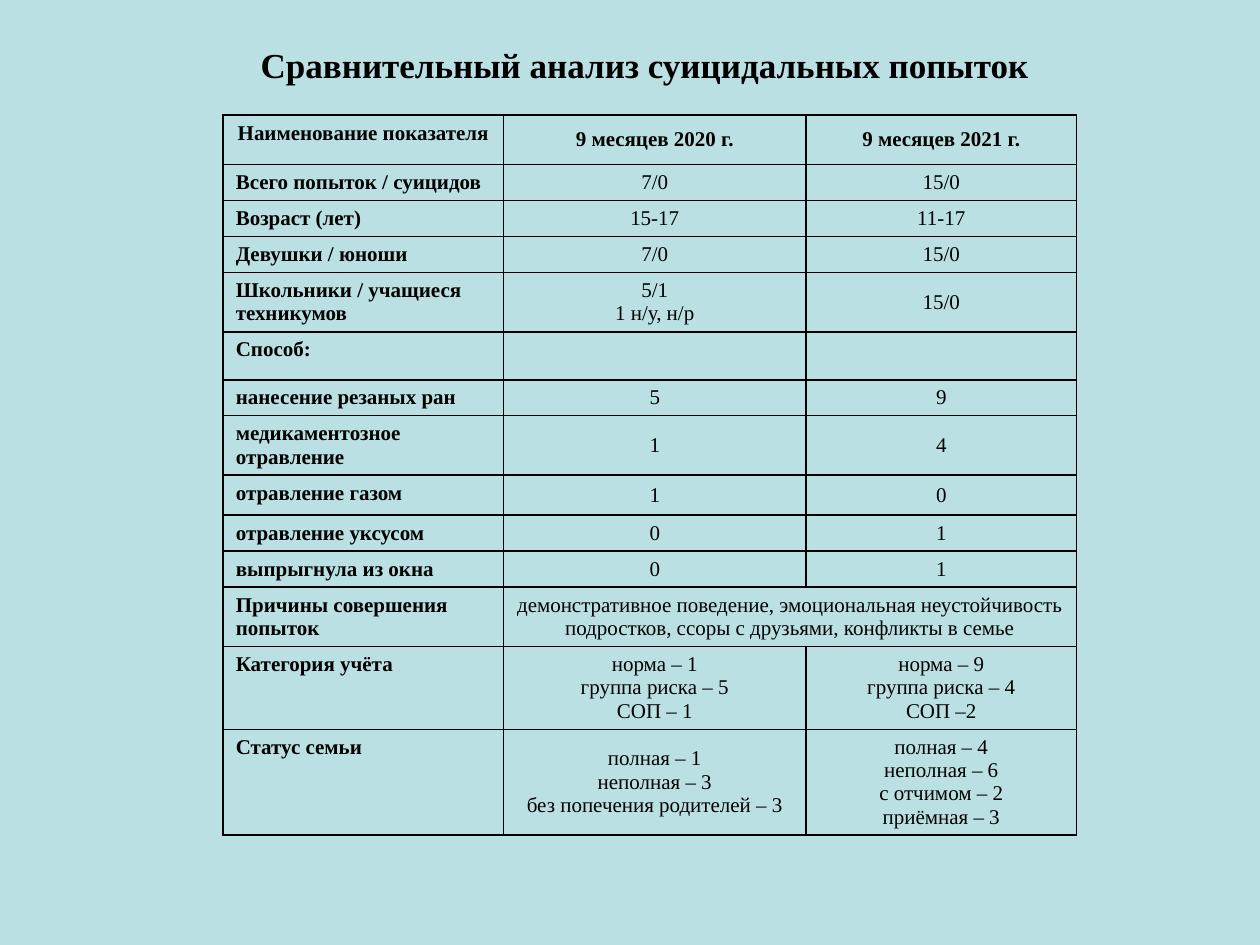
from pptx import Presentation
from pptx.dml.color import RGBColor
from pptx.enum.text import MSO_ANCHOR, PP_ALIGN
from pptx.oxml import parse_xml
from pptx.oxml.ns import nsdecls
from pptx.util import Cm, Pt

COLORS = {"back": "BBE0E3", "ink": "000000"}
WIDTHS = [5.65, 6.1, 5.45]
HEIGHTS = [1, 0.72, 0.72, 0.72, 1.19, 0.81, 0.72,
           1.19, 0.81, 0.72, 0.72, 1.19, 1.67, 2.13]
ROWS = [
    ("Наименование показателя", "9 месяцев 2020 г.", "9 месяцев 2021 г."),
    ("Всего попыток / суицидов", "7/0", "15/0"),
    ("Возраст (лет)", "15-17", "11-17"),
    ("Девушки / юноши", "7/0", "15/0"),
    ("Школьники / учащиеся техникумов", "5/1\n1 н/у, н/р", "15/0"),
    ("Способ:", "", ""),
    ("нанесение резаных ран", "5", "9"),
    ("медикаментозное отравление", "1", "4"),
    ("отравление газом", "1", "0"),
    ("отравление уксусом", "0", "1"),
    ("выпрыгнула из окна", "0", "1"),
    ("Причины совершения попыток",
     "демонстративное поведение, эмоциональная неустойчивость "
     "подростков, ссоры с друзьями, конфликты в семье"),
    ("Категория учёта", "норма – 1\nгруппа риска – 5\nСОП – 1",
     "норма – 9\nгруппа риска – 4\nСОП –2"),
    ("Статус семьи", "полная – 1\nнеполная – 3\nбез попечения родителей – 3",
     "полная – 4\nнеполная – 6\nс отчимом – 2\nприёмная – 3"),
]


class Deck:
    """Holds the style and the current slide."""

    def __init__(self):
        self.font = "Times New Roman"
        self.file = Presentation()
        self.file.slide_width, self.file.slide_height = Cm(25.4), Cm(19.05)
        self.slide = self.file.slides.add_slide(self.file.slide_layouts[5])
        fill = self.slide.background.fill
        fill.solid()
        fill.fore_color.rgb = RGBColor.from_string(COLORS["back"])

    def label(self, frame, text, size, bold, align):
        frame.text = text
        for para in frame.paragraphs:
            para.alignment = align
            para.font.name = self.font
            para.font.size = Pt(size)
            para.font.bold = bold
            para.font.color.rgb = RGBColor.from_string(COLORS["ink"])
            if not text:
                para.add_run().font.size = Pt(size)

    def title(self, text, left, top, width, height):
        shape = self.slide.shapes.title
        shape.left, shape.top = Cm(left), Cm(top)
        shape.width, shape.height = Cm(width), Cm(height)
        shape.text_frame.vertical_anchor = MSO_ANCHOR.MIDDLE
        self.label(shape.text_frame, text, 20, True, PP_ALIGN.CENTER)

    def border(self, cell):
        props = cell._tc.get_or_add_tcPr()
        for place, side in enumerate(("lnL", "lnR", "lnT", "lnB")):
            props.insert(place, parse_xml(
                f'<a:{side} {nsdecls("a")} w="{Pt(1)}"><a:solidFill>'
                f'<a:srgbClr val="{COLORS["ink"]}"/></a:solidFill></a:{side}>'))

    def table(self, rows, left, top, widths, heights):
        table = self.slide.shapes.add_table(
            len(rows), len(widths), Cm(left), Cm(top),
            Cm(sum(widths)), Cm(sum(heights))).table
        table.first_row = table.horz_banding = False
        for col, width in zip(table.columns, widths):
            col.width = Cm(width)
        for r, (texts, height) in enumerate(zip(rows, heights)):
            table.rows[r].height = Cm(height)
            for c in range(len(widths)):
                cell = table.cell(r, c)
                cell.fill.background()
                self.border(cell)
                cell.vertical_anchor = MSO_ANCHOR.MIDDLE if c else MSO_ANCHOR.TOP
                align = PP_ALIGN.LEFT if r and not c else PP_ALIGN.CENTER
                if c < len(texts):
                    self.label(cell.text_frame, texts[c], 12, not (r and c), align)
            if len(texts) < len(widths):
                table.cell(r, len(texts) - 1).merge(table.cell(r, len(widths) - 1))


def main():
    deck = Deck()
    deck.title("Сравнительный анализ суицидальных попыток", 2.7, 0.7, 20.6, 1.2)
    deck.table(ROWS, 4.5, 2.32, WIDTHS, HEIGHTS)
    deck.file.save("out.pptx")


if __name__ == "__main__":
    main()
